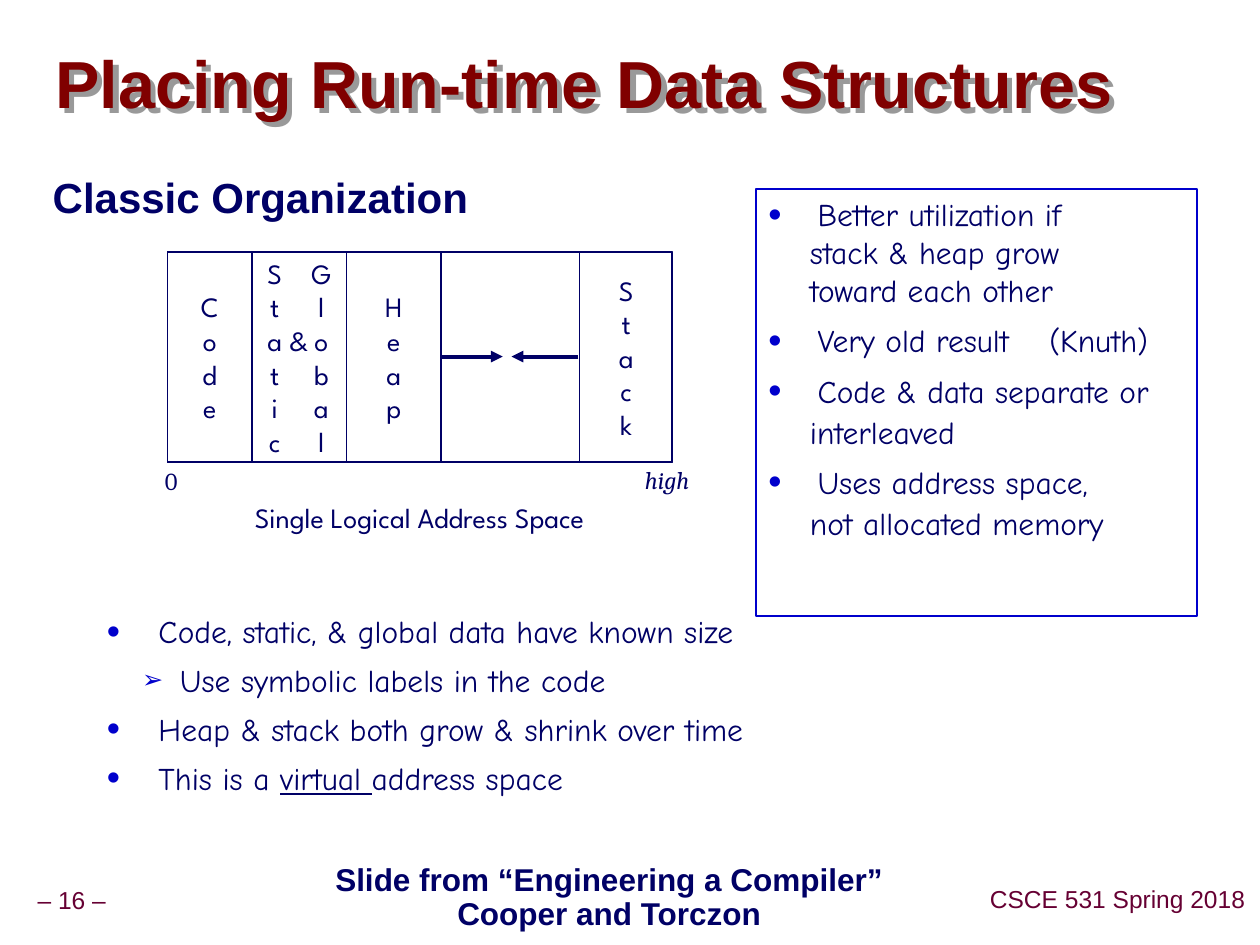
"""Build the slide on placing run-time data structures in memory."""
from lxml.etree import SubElement
from pptx import Presentation
from pptx.dml.color import RGBColor
from pptx.enum.shapes import MSO_CONNECTOR as Connector, MSO_SHAPE as Shape
from pptx.enum.text import MSO_ANCHOR as Anchor, PP_ALIGN as Align
from pptx.oxml.ns import qn
from pptx.util import Inches, Pt

NAVY = RGBColor(0x00, 0x00, 0x66)
BLUE = RGBColor(0x00, 0x00, 0xCC)
MAROON = RGBColor(0x80, 0x00, 0x00)
PLUM = RGBColor(0x66, 0x00, 0x33)
GRAY = RGBColor(0x99, 0x99, 0x99)

HEADING = {"name": "Arial", "size": Pt(24), "bold": True}
TITLE = HEADING | {"size": Pt(38), "color": MAROON}
CREDIT = HEADING | {"size": Pt(18)}
FOOTER = {"name": "Arial", "size": Pt(14), "color": PLUM}
BODY = {"name": "Comic Neue", "size": Pt(18)}
LABEL = {"name": "League Spartan", "size": Pt(16)}
ADDRESS = {"name": "Cambria", "size": Pt(14)}

CENTER = {"alignment": Align.CENTER}
TIGHT = CENTER | {"line_spacing": 0.9}
DOT = ("•", 120)
ARROW = ("➢", 80)
MAP_TOP, MAP_HEIGHT = 2, 1.67
ARROW_Y = 2.83


class SlideBuilder:
    """Hold the default style and the current slide."""

    def __init__(self, slide, color):
        self.slide = slide
        self.color = color

    def child(self, parent, tag, **attributes):
        return SubElement(parent, qn(tag), {key: str(value) for key, value in attributes.items()})

    def add_runs(self, paragraph, runs, style, layout):
        for key, value in layout.items():
            setattr(paragraph, key, value)
        for text, changes in runs:
            run = paragraph.add_run()
            run.text = text
            values = {"color": self.color} | style | changes
            run.font.color.rgb = values.pop("color")
            spacing = values.pop("spacing", None)
            for key, value in values.items():
                setattr(run.font, key, value)
            if spacing:
                run.font._element.set("spc", str(spacing))

    def indent(self, paragraph, margin, hanging, bullet=None):
        properties = paragraph._p.get_or_add_pPr()
        properties.set("marL", str(Inches(margin)))
        properties.set("indent", str(-Inches(hanging)))
        if bullet:
            character, percent = bullet
            color = self.child(properties, "a:buClr")
            self.child(color, "a:srgbClr", val=BLUE)
            self.child(properties, "a:buSzPct", val=percent * 1000)
            self.child(properties, "a:buFont", typeface="Arial")
            self.child(properties, "a:buChar", char=character)

    def fill_text(self, shape, lines, style, layout, **frame_values):
        frame = shape.text_frame
        defaults = {"word_wrap": True, "vertical_anchor": Anchor.TOP}
        for key, value in (defaults | frame_values).items():
            setattr(frame, key, value)
        for number, line in enumerate(lines):
            paragraph = frame.paragraphs[0] if number == 0 else frame.add_paragraph()
            runs = [(line, {})] if isinstance(line, str) else line
            self.add_runs(paragraph, runs, style, layout)
        return frame.paragraphs

    def text(self, bounds, lines, style, layout, inset=None, **frame_values):
        box = self.slide.shapes.add_textbox(*map(Inches, bounds))
        if inset is not None:
            sides = ("left", "right", "top", "bottom")
            frame_values |= {f"margin_{side}": Inches(inset) for side in sides}
        self.fill_text(box, lines, style, layout, **frame_values)
        return box

    def bullets(self, shape, items):
        lines = [line for line, *_ in items]
        paragraphs = self.fill_text(shape, lines, BODY, {"alignment": Align.LEFT})
        for paragraph, (_, before, *indent) in zip(paragraphs, items):
            paragraph.space_before = Pt(before)
            self.indent(paragraph, *indent)

    def rectangle(self, bounds, color, width):
        shape = self.slide.shapes.add_shape(Shape.RECTANGLE, *map(Inches, bounds))
        shape.shadow.inherit = False
        shape.fill.background()
        shape.line.color.rgb = color
        shape.line.width = Pt(width)
        return shape

    def cell(self, left, width, letters, layout=CENTER):
        shape = self.rectangle((left, MAP_TOP, width, MAP_HEIGHT), self.color, 0.75)
        return self.fill_text(shape, letters, LABEL, layout, vertical_anchor=Anchor.MIDDLE,
                              margin_left=0, margin_right=0)

    def paired_cell(self, left, width, rows, stops):
        lines = ["\t" + "\t".join(row) for row in rows]
        for paragraph in self.cell(left, width, lines, {"alignment": Align.LEFT}):
            tabs = self.child(paragraph._p.get_or_add_pPr(), "a:tabLst")
            for stop in stops:
                self.child(tabs, "a:tab", pos=Inches(stop), algn="ctr")

    def arrow(self, start, end, y):
        points = map(Inches, (start, y, end, y))
        line = self.slide.shapes.add_connector(Connector.STRAIGHT, *points)
        line.line.color.rgb = self.color
        line.line.width = Pt(2.25)
        self.child(line.line._get_or_add_ln(), "a:tailEnd", type="triangle")
        self.child(line._element.spPr, "a:effectLst")

    def shadow(self, shape, color):
        effects = self.child(shape._element.spPr, "a:effectLst")
        outer = self.child(effects, "a:outerShdw", dist=Inches(0.06), dir=2700000, algn="ctr")
        self.child(outer, "a:srgbClr", val=color)


def main():
    presentation = Presentation()
    presentation.slide_width, presentation.slide_height = Inches(10), Inches(7.5)
    slide = presentation.slides.add_slide(presentation.slide_layouts[6])
    builder = SlideBuilder(slide, NAVY)

    for bounds, text in (((0.24, 7, 0.66, 0.31), "– 16 –"),
                         ((7.8, 6.99, 2.14, 0.31), "CSCE 531 Spring 2018")):
        builder.text(bounds, [text], FOOTER, TIGHT, inset=0.05,
                     word_wrap=False, vertical_anchor=Anchor.MIDDLE)

    title = builder.text((0.44, 0.27, 9.53, 0.85), ["Placing Run-time Data Structures"], TITLE,
                         {"line_spacing": 0.87}, inset=0, vertical_anchor=Anchor.MIDDLE)
    builder.shadow(title, GRAY)
    builder.text((0.32, 1.34, 5, 0.5), ["Classic Organization"], HEADING, {"line_spacing": 0.95})

    facts = slide.shapes.add_textbox(*map(Inches, (0.75, 4.81, 5.83, 1.86)))
    virtual = [("This is a ", {}), ("virtual ", {"underline": True}), ("address space", {})]
    builder.bullets(facts, [
        ("Code, static, & global data have known size", 0, 0.41, 0.41, DOT),
        ("Use symbolic labels in the code", 6.3, 0.58, 0.3, ARROW),
        ("Heap & stack both grow & shrink over time", 6.3, 0.41, 0.41, DOT),
        (virtual, 6.3, 0.41, 0.41, DOT),
    ])

    notes = builder.rectangle((6, 1.5, 3.5, 3.39), BLUE, 0.75)
    knuth = [("Very old result", {}), (" ", {"spacing": 1700}), ("(Knuth)", {})]
    builder.bullets(notes, [
        ("Better utilization if", 0, 0.39, 0.39, DOT),
        ("stack & heap grow", 0, 0.33, 0),
        ("toward each other", 0, 0.33, 0),
        (knuth, 7.2, 0.39, 0.39, DOT),
        ("Code & data separate or", 7.2, 0.39, 0.39, DOT),
        ("interleaved", 1.8, 0.33, 0),
        ("Uses address space,", 7.2, 0.39, 0.39, DOT),
        ("not allocated memory", 1.8, 0.33, 0),
    ])

    builder.rectangle((1.33, MAP_TOP, 4, MAP_HEIGHT), NAVY, 1)
    for left, width, name in ((1.33, 0.67, "Code"), (2.75, 0.75, "Heap"), (4.6, 0.74, "Stack")):
        builder.cell(left, width, name)
    middle = ["", "", "&", "", "", ""]
    builder.paired_cell(2, 0.75, zip("Static", middle, "Global"), (0.18, 0.37, 0.55))
    builder.arrow(3.5, 3.99, ARROW_Y)
    builder.arrow(4.59, 4.06, ARROW_Y)

    for bounds, text, style in (
            ((1.6, 3.92, 3.46, 0.37), "Single Logical Address Space", LABEL),
            ((1.11, 3.65, 0.5, 0.33), "0", ADDRESS),
            ((4.96, 3.64, 0.67, 0.33), "high", ADDRESS | {"italic": True})):
        builder.text(bounds, [text], style, CENTER)

    builder.text((2.61, 6.81, 4.45, 0.64),
                 ["Slide from “Engineering a Compiler”", "Cooper and Torczon"],
                 CREDIT, TIGHT, inset=0.05, word_wrap=False)
    presentation.save("out.pptx")


if __name__ == "__main__":
    main()
